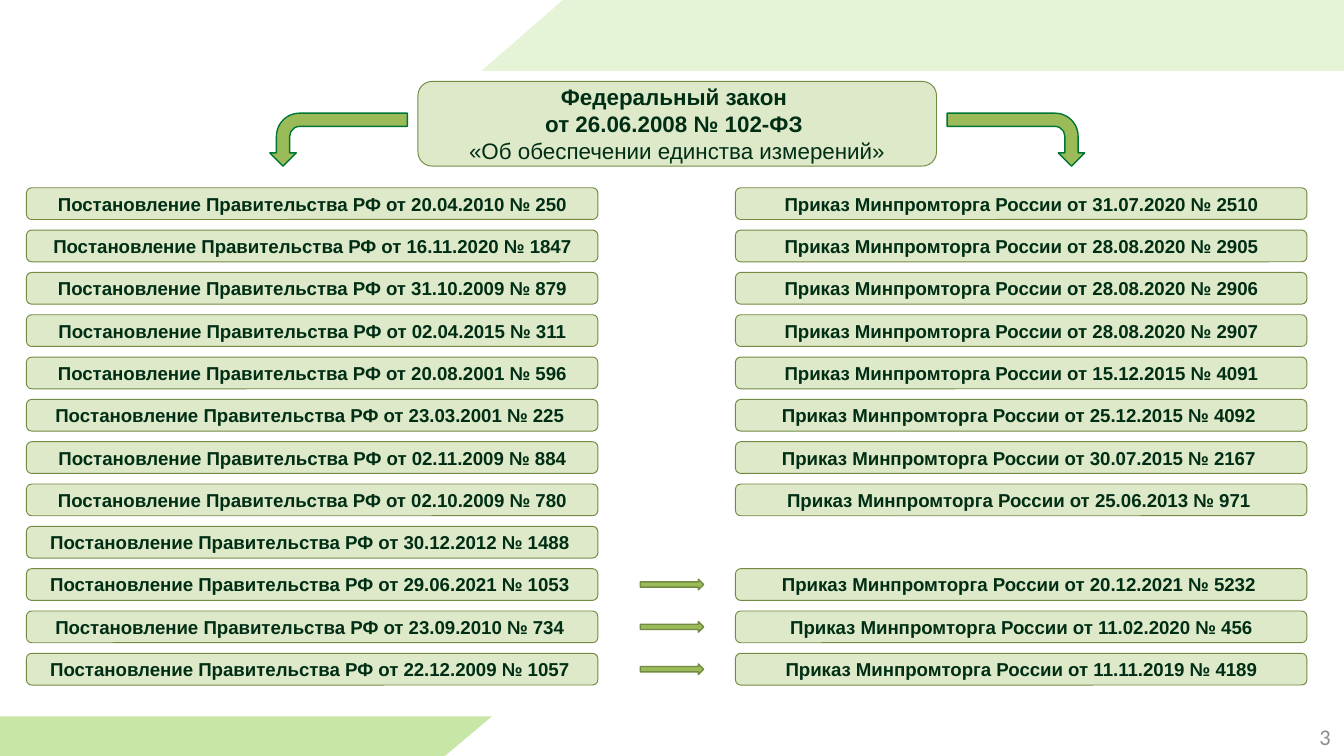
from lxml import etree
from pptx import Presentation
from pptx.dml.color import RGBColor
from pptx.enum import shapes, text
from pptx.oxml import ns
from pptx.util import Cm, Pt

GREEN, LIME, OLIVE, INK = "9BBB59", "92D050", "738A42", "002E15"

DECREES = [
    "20.04.2010 № 250", "16.11.2020 № 1847", "31.10.2009 № 879",
    "02.04.2015 № 311", "20.08.2001 № 596", "23.03.2001 № 225 ",
    "02.11.2009 № 884", "02.10.2009 № 780", "30.12.2012 № 1488 ",
    "29.06.2021 № 1053 ", "23.09.2010 № 734 ", "22.12.2009 № 1057 ",
]
ORDERS = [
    "31.07.2020 № 2510", "28.08.2020 № 2905", "28.08.2020 № 2906",
    "28.08.2020 № 2907", "15.12.2015 № 4091", "25.12.2015 № 4092 ",
    "30.07.2015 № 2167 ", "25.06.2013 № 971 ", None,
    "20.12.2021 № 5232 ", "11.02.2020 № 456", "11.11.2019 № 4189",
]
LINKED_ROWS = (9, 10, 11)
TOP, PITCH, ROW_H, COL_W = 3.55, 0.8, 0.6, 10.8


def rgb(value):
    """Turn a hex string into a colour."""
    return RGBColor.from_string(value)


class Deck:
    """Hold the style and the current slide."""

    def __init__(self):
        """Start a presentation with one blank slide."""
        self.prs = Presentation()
        self.prs.slide_width, self.prs.slide_height = Cm(25.4), Cm(14.29)
        self.s = self.prs.slides.add_slide(self.prs.slide_layouts[6])

    def paint(self, sp, color, alpha=100, line=None, width=0.5):
        """Set the fill, its opacity and the outline of a shape."""
        sp.shadow.inherit = False
        sp.fill.solid()
        sp.fill.fore_color.rgb = rgb(color)
        if alpha < 100:
            clr = sp._element.spPr.find(".//" + ns.qn("a:srgbClr"))
            etree.SubElement(clr, ns.qn("a:alpha"), val=str(alpha * 1000))
        if line:
            sp.line.color.rgb = rgb(line)
            sp.line.width = Pt(width)
        else:
            sp.line.fill.background()

    def band(self, points, alpha):
        """Draw a slanted band through the given points."""
        pts = [(Cm(x), Cm(y)) for x, y in points]
        builder = self.s.shapes.build_freeform(*pts[0])
        builder.add_line_segments(pts[1:], close=True)
        self.paint(builder.convert_to_shape(), LIME, alpha)

    def label(self, sp, lines, size, color, font="Arial", align=text.PP_ALIGN.CENTER):
        """Fill a shape with one paragraph of (text, bold) lines."""
        tf = sp.text_frame
        tf.word_wrap = True
        tf.vertical_anchor = text.MSO_ANCHOR.MIDDLE
        tf.margin_top = tf.margin_bottom = 0
        p = tf.paragraphs[0]
        p.alignment = align
        p.font.size, p.font.name = Pt(size), font
        p.font.color.rgb = rgb(color)
        for i, (line, bold) in enumerate(lines):
            if i:
                p.add_line_break()
            r = p.add_run()
            r.text = line
            r.font.bold = bold

    def box(self, x, y, w, h, lines, size=10):
        """Add a rounded box with text."""
        sp = self.s.shapes.add_shape(
            shapes.MSO_SHAPE.ROUNDED_RECTANGLE, Cm(x), Cm(y), Cm(w), Cm(h))
        self.paint(sp, GREEN, 32, OLIVE)
        self.label(sp, lines, size, INK)

    def column(self, x, prefix, items):
        """Stack one box per document, leaving gaps for missing ones."""
        for i, item in enumerate(items):
            if item:
                self.box(x, TOP + i * PITCH, COL_W, ROW_H, [(prefix + item, True)])

    def arrow(self, kind, x, y, w, h, line=OLIVE, rotation=0, flip=False):
        """Add a block arrow, optionally turned and mirrored."""
        sp = self.s.shapes.add_shape(kind, Cm(x), Cm(y), Cm(w), Cm(h))
        self.paint(sp, GREEN, line=line, width=0.75)
        sp.rotation = rotation
        if flip:
            sp._element.spPr.xfrm.set("flipH", "1")

    def number(self, value):
        """Add the page number in the bottom right corner."""
        sp = self.s.shapes.add_textbox(Cm(19.48), Cm(13.54), Cm(5.92), Cm(0.76))
        self.label(sp, [(value, False)], 12, "8C8C8C", "Calibri", text.PP_ALIGN.RIGHT)


def main():
    """Build the slide and save it."""
    deck = Deck()
    deck.band([(10.64, 0), (25.4, 0), (25.4, 1.34), (9.1, 1.34)], 23)
    deck.band([(8.41, 14.29), (0, 14.29), (0, 13.54), (9.3, 13.54)], 50)
    deck.number("3")
    deck.box(7.9, 1.54, 9.8, 1.6, [
        ("Федеральный закон ", True),
        ("от 26.06.2008 № 102-ФЗ ", True),
        ("«Об обеспечении единства измерений»", False),
    ], 12)
    deck.column(0.5, "Постановление Правительства РФ от ", DECREES)
    deck.column(13.9, "Приказ Минпромторга России от ", ORDERS)
    bent = shapes.MSO_SHAPE.BENT_ARROW
    deck.arrow(bent, 18.7, 1.34, 1, 2.6, "007635", 90)
    deck.arrow(bent, 5.9, 1.34, 1, 2.6, "007635", 270, True)
    for i in LINKED_ROWS:
        deck.arrow(shapes.MSO_SHAPE.RIGHT_ARROW, 12.1, TOP + i * PITCH + 0.2, 1.2, 0.2)
    deck.prs.save("out.pptx")


if __name__ == "__main__":
    main()
